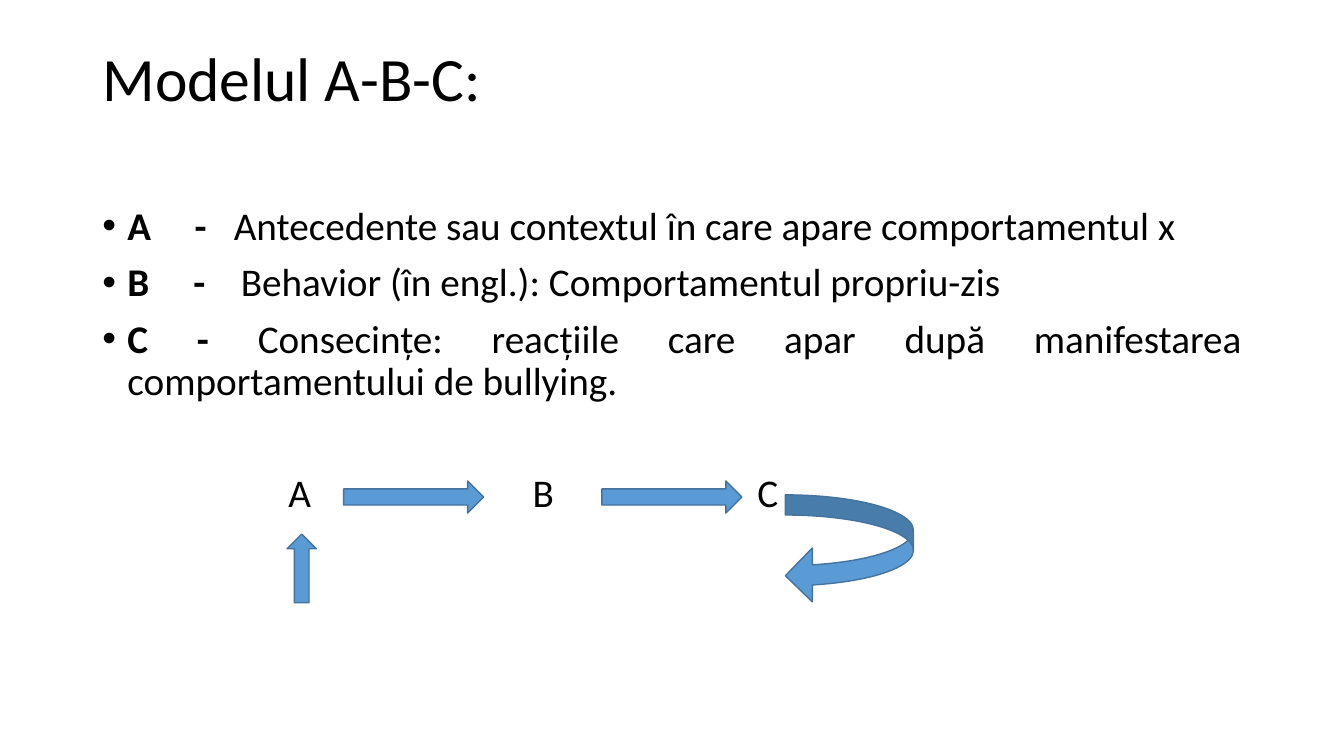
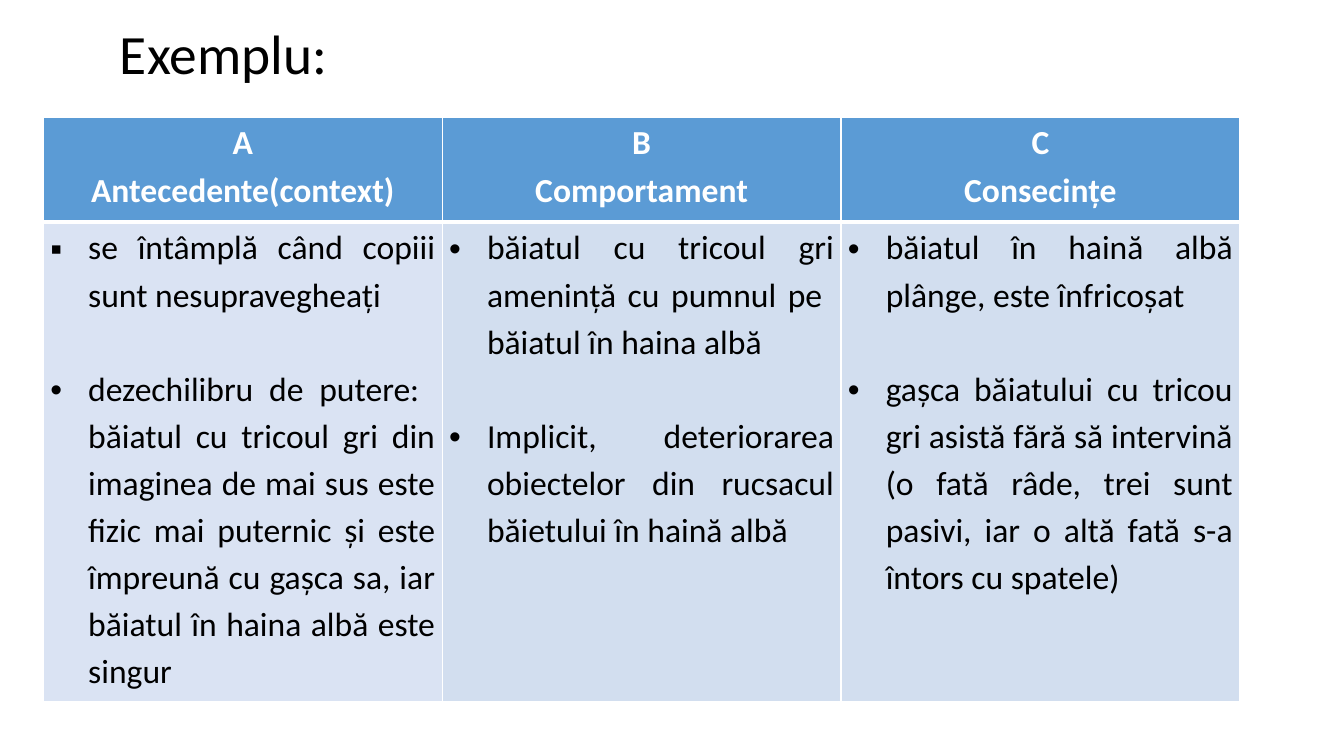
from dataclasses import dataclass
from typing import Optional

from lxml.etree import SubElement
from pptx import Presentation
from pptx.dml.color import RGBColor
from pptx.enum.shapes import MSO_SHAPE
from pptx.enum.text import MSO_ANCHOR, MSO_AUTO_SIZE, PP_ALIGN
from pptx.oxml.ns import qn
from pptx.util import Pt

FONT = "Calibri"
COLORS = {
    "text": "000000",
    "white": "FFFFFF",
    "accent": "5B9BD5",
    "outline": "43739E",
    "first_cell": "DAE3F3",
    "cell": "D2DEEF",
}
BODY_SIZE, TABLE_SIZE = 28, 24


@dataclass
class Box:
    left: float
    top: float
    width: float
    height: float

    def emu(self) -> tuple:
        return Pt(self.left), Pt(self.top), Pt(self.width), Pt(self.height)


@dataclass
class Definition:
    lead: str
    text: str
    tabs: tuple = ()


@dataclass
class Arrow:
    kind: MSO_SHAPE
    box: Box
    adjustments: tuple = ()


@dataclass
class Column:
    letter: str
    heading: str
    items: tuple
    fill: str = "cell"
    first_bullet: str = "•"


# Shared helpers
def rgb(name: str) -> RGBColor:
    return RGBColor.from_string(COLORS[name])


def format_runs(p, size: float, color: str = "text", bold: Optional[bool] = None) -> None:
    for r in p.runs:
        r.font.name = FONT
        r.font.size = Pt(size)
        r.font.color.rgb = rgb(color)
        if bold is not None:
            r.font.bold = bold


def add_bullet(p, char: str, indent: float, tabs: tuple = ()) -> None:
    pPr = p._p.get_or_add_pPr()
    pPr.set("marL", str(Pt(indent)))
    pPr.set("indent", str(-Pt(indent)))
    SubElement(pPr, qn("a:buFont"), typeface="Arial")
    SubElement(pPr, qn("a:buChar"), char=char)
    if tabs:
        tab_list = SubElement(pPr, qn("a:tabLst"))
        for position in tabs:
            SubElement(tab_list, qn("a:tab"), pos=str(Pt(position)), algn="l")


def add_titled_slide(prs, title: str, box: Box, size: float):
    s = prs.slides.add_slide(prs.slide_layouts[5])
    sp = s.shapes.title
    sp.left, sp.top, sp.width, sp.height = box.emu()
    tf = sp.text_frame
    tf.text = title
    tf.auto_size = MSO_AUTO_SIZE.NONE
    tf.vertical_anchor = MSO_ANCHOR.MIDDLE
    p = tf.paragraphs[0]
    p.alignment = PP_ALIGN.LEFT
    p.line_spacing = 0.9
    format_runs(p, size)
    return s


# Model slide
def add_definitions(s, box: Box, definitions: list[Definition]) -> None:
    tf = s.shapes.add_textbox(*box.emu()).text_frame
    tf.word_wrap = True
    for i, item in enumerate(definitions):
        p = tf.add_paragraph() if i else tf.paragraphs[0]
        p.alignment = PP_ALIGN.JUSTIFY
        p.line_spacing = 0.9
        p.space_before = Pt(10)
        for text in (item.lead, item.text):
            p.add_run().text = text
        format_runs(p, BODY_SIZE)
        p.runs[0].font.bold = True
        add_bullet(p, "•", 18, item.tabs)


def add_letter(s, letter: str, center_x: float, center_y: float) -> None:
    side = 40
    box = Box(center_x - side / 2, center_y - side / 2, side, side)
    tf = s.shapes.add_textbox(*box.emu()).text_frame
    tf.word_wrap = True
    tf.vertical_anchor = MSO_ANCHOR.MIDDLE
    tf.text = letter
    p = tf.paragraphs[0]
    p.alignment = PP_ALIGN.CENTER
    format_runs(p, BODY_SIZE)


def add_arrow(s, arrow: Arrow) -> None:
    sp = s.shapes.add_shape(arrow.kind, *arrow.box.emu())
    for i, value in enumerate(arrow.adjustments):
        sp.adjustments[i] = value
    sp.shadow.inherit = False
    sp.fill.solid()
    sp.fill.fore_color.rgb = rgb("accent")
    sp.line.color.rgb = rgb("outline")
    sp.line.width = Pt(1)


def build_model_slide(prs) -> None:
    s = add_titled_slide(prs, "Modelul A-B-C:", Box(66, 29, 828, 59), 44)
    add_definitions(s, Box(66, 144, 828, 160), [
        Definition("A\t-\t", "Antecedente sau contextul în care apare comportamentul x",
                   (66, 94)),
        Definition("B\t-\t", "Behavior (în engl.): Comportamentul propriu-zis", (65, 99)),
        Definition("C - ", "Consecințe: reacțiile care apar după manifestarea "
                           "comportamentului de bullying."),
    ])
    # Chain of letters and arrows
    for letter, center_x in (("A", 214), ("B", 388), ("C", 548.5)):
        add_letter(s, letter, center_x, 351.5)
    for arrow in (
        Arrow(MSO_SHAPE.RIGHT_ARROW, Box(245.5, 343.5, 100, 23)),
        Arrow(MSO_SHAPE.RIGHT_ARROW, Box(430, 343.5, 100, 23)),
        Arrow(MSO_SHAPE.CURVED_LEFT_ARROW, Box(561, 353.5, 91.5, 77), (0.187, 0.5, 0.25)),
        Arrow(MSO_SHAPE.UP_ARROW, Box(205, 381.5, 21, 49)),
    ):
        add_arrow(s, arrow)


# Example slide
def style_cell(cell, fill: str, top: float, bottom: float) -> None:
    cell.margin_left = cell.margin_right = Pt(5)
    cell.margin_top = cell.margin_bottom = 0
    tcPr = cell._tc.get_or_add_tcPr()
    for side, width in (("L", 1), ("R", 1), ("T", top), ("B", bottom)):
        ln = SubElement(tcPr, qn(f"a:ln{side}"), w=str(Pt(width)))
        solid = SubElement(ln, qn("a:solidFill"))
        SubElement(solid, qn("a:srgbClr"), val=COLORS["white"])
    cell.fill.solid()
    cell.fill.fore_color.rgb = rgb(fill)


def fill_cell(cell, texts: tuple, color: str, bold: bool, align: PP_ALIGN) -> list:
    tf = cell.text_frame
    for i, text in enumerate(texts):
        p = tf.add_paragraph() if i else tf.paragraphs[0]
        p.text = text
        p.alignment = align
        p.line_spacing = 1.15
        format_runs(p, TABLE_SIZE, color, bold)
    return list(tf.paragraphs)


def add_example_table(s, box: Box, header_height: float, columns: list[Column]) -> None:
    table = s.shapes.add_table(2, len(columns), *box.emu()).table
    table.horz_banding = False
    table.rows[0].height = Pt(header_height)
    table.rows[1].height = Pt(box.height - header_height)
    for i, column in enumerate(columns):
        table.columns[i].width = Pt(box.width / len(columns))
        header, body = table.cell(0, i), table.cell(1, i)
        style_cell(header, "accent", 1, 3)
        fill_cell(header, (column.letter, column.heading), "white", True, PP_ALIGN.CENTER)
        style_cell(body, column.fill, 3, 1)
        paragraphs = fill_cell(body, column.items, "text", False, PP_ALIGN.JUSTIFY)
        for j, p in enumerate(paragraphs):
            if j:
                p.space_before = Pt(33.7)  # one line of text
            add_bullet(p, "•" if j else column.first_bullet, 27)


def build_example_slide(prs) -> None:
    s = add_titled_slide(prs, "Exemplu:", Box(78.5, 16.5, 806, 47.5), 39.6)
    add_example_table(s, Box(31, 83.5, 854.6, 418), 75, [
        Column("A", "Antecedente(context)", (
            "se întâmplă când copiii sunt nesupravegheați",
            "dezechilibru de putere:  băiatul cu tricoul gri din imaginea de mai sus "
            "este fizic mai puternic și este împreună cu gașca sa, iar băiatul în "
            "haina albă este singur",
        ), "first_cell", "▪"),
        Column("B", "Comportament", (
            "băiatul cu tricoul gri amenință cu pumnul pe  băiatul în haina albă",
            "Implicit, deteriorarea obiectelor din rucsacul băietului în haină albă",
        )),
        Column("C", "Consecințe", (
            "băiatul în haină albă plânge, este înfricoșat",
            "gașca băiatului cu tricou gri asistă fără să intervină (o fată râde, "
            "trei sunt pasivi, iar o altă fată s-a întors cu spatele)",
        )),
    ])


def main() -> None:
    prs = Presentation()
    prs.slide_width, prs.slide_height = Pt(960), Pt(540)
    build_model_slide(prs)
    build_example_slide(prs)
    prs.save("out.pptx")


if __name__ == "__main__":
    main()
